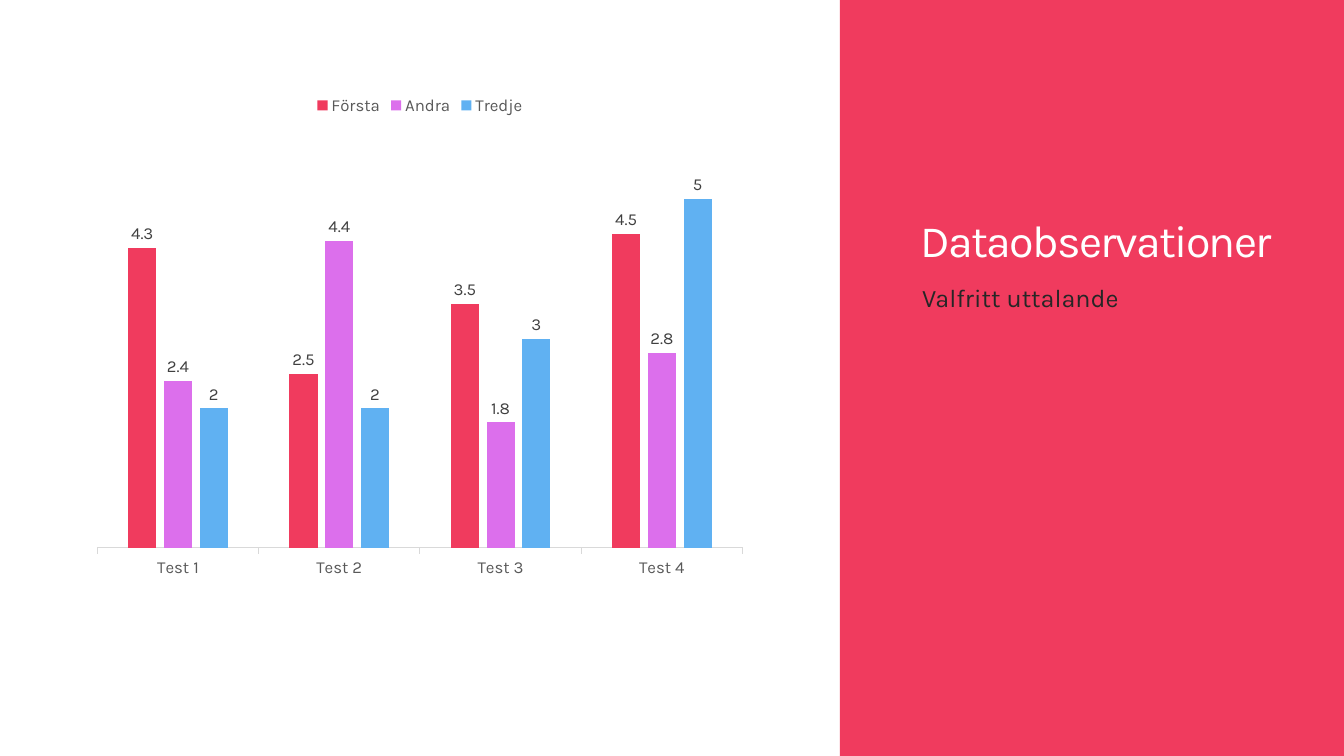
import pptx
import pptx.chart.data
import pptx.dml.color
import pptx.enum.chart
import pptx.enum.shapes
import pptx.enum.text
import pptx.util

FONT = "Karla"
RED, PURPLE, BLUE = "F03B5E", "DC6FEC", "60B1F2"
WHITE, INK, LABEL, GRAY, RULE = "FFFFFF", "262626", "404040", "595959", "D9D9D9"
COLUMNS, ROWS = 16, 9


def rgb(value):
    return pptx.dml.color.RGBColor.from_string(value)


class Deck:
    """Holds the style and current slide, placing elements on a 16 by 9 grid."""

    def __init__(self):
        self.prs = pptx.Presentation()
        self.prs.slide_width = pptx.util.Inches(13.33)
        self.prs.slide_height = pptx.util.Inches(7.5)
        self.s = self.prs.slides.add_slide(self.prs.slide_layouts[6])

    def box(self, col, row, cols, rows):
        dx, dy = self.prs.slide_width / COLUMNS, self.prs.slide_height / ROWS
        return [round(v) for v in (col * dx, row * dy, cols * dx, rows * dy)]

    def style(self, font, size, color):
        font.name = FONT
        font.size = pptx.util.Pt(size)
        font.color.rgb = rgb(color)

    def panel(self, color, *cells):
        sp = self.s.shapes.add_shape(
            pptx.enum.shapes.MSO_SHAPE.RECTANGLE, *self.box(*cells))
        sp.shadow.inherit = False
        sp.fill.solid()
        sp.fill.fore_color.rgb = rgb(color)
        sp.line.fill.background()

    def text(self, words, size, color, *cells, bottom=False, leading=1.0,
             before=0, tracking=0):
        tf = self.s.shapes.add_textbox(*self.box(*cells)).text_frame
        tf.word_wrap = True
        anchors = pptx.enum.text.MSO_ANCHOR
        tf.vertical_anchor = anchors.BOTTOM if bottom else anchors.TOP
        p = tf.paragraphs[0]
        r = p.add_run()
        r.text = words
        p.line_spacing = leading
        p.space_before = pptx.util.Pt(before)
        self.style(p.font, size, color)
        if tracking:
            r.font._element.set("spc", str(round(tracking * 100)))

    def columns(self, categories, series, *cells):
        data = pptx.chart.data.CategoryChartData()
        data.categories = categories
        for name, values, _ in series:
            data.add_series(name, values)
        kinds = pptx.enum.chart
        chart = self.s.shapes.add_chart(
            kinds.XL_CHART_TYPE.COLUMN_CLUSTERED, *self.box(*cells), data).chart
        self.style(chart.font, 12, GRAY)
        chart.has_title = False
        chart.has_legend = True
        chart.legend.position = kinds.XL_LEGEND_POSITION.TOP
        chart.legend.include_in_layout = False
        self.style(chart.legend.font, 12, GRAY)

        chart.value_axis.visible = False
        chart.value_axis.has_major_gridlines = False
        chart.value_axis.minimum_scale = 0
        chart.value_axis.maximum_scale = 6
        axis = chart.category_axis
        axis.major_tick_mark = kinds.XL_TICK_MARK.OUTSIDE
        axis.format.line.color.rgb = rgb(RULE)
        axis.format.line.width = pptx.util.Pt(0.75)
        self.style(axis.tick_labels.font, 12, GRAY)

        plot = chart.plots[0]
        plot.vary_by_categories = False
        plot.gap_width = 219
        plot.overlap = -27
        for bars, (_, _, color) in zip(plot.series, series):
            bars.format.fill.solid()
            bars.format.fill.fore_color.rgb = rgb(color)
            labels = bars.data_labels
            labels.show_value = True
            labels.position = kinds.XL_LABEL_POSITION.OUTSIDE_END
            self.style(labels.font, 12, LABEL)


def main():
    deck = Deck()
    deck.panel(RED, 10, 0, 6, 9)
    deck.text("Dataobservationer", 32, WHITE, 10.84, 0.71, 4.44, 2.52,
              bottom=True, leading=0.85, tracking=-1.2)
    deck.text("Valfritt uttalande", 18, INK, 10.86, 3.3, 4.46, 4.1, before=12)
    deck.columns(
        [f"Test {n}" for n in range(1, 5)],
        [("Första", (4.3, 2.5, 3.5, 4.5), RED),
         ("Andra", (2.4, 4.4, 1.8, 2.8), PURPLE),
         ("Tredje", (2, 2, 3, 5), BLUE)],
        1, 1, 8, 6)
    deck.prs.save("out.pptx")


if __name__ == "__main__":
    main()
